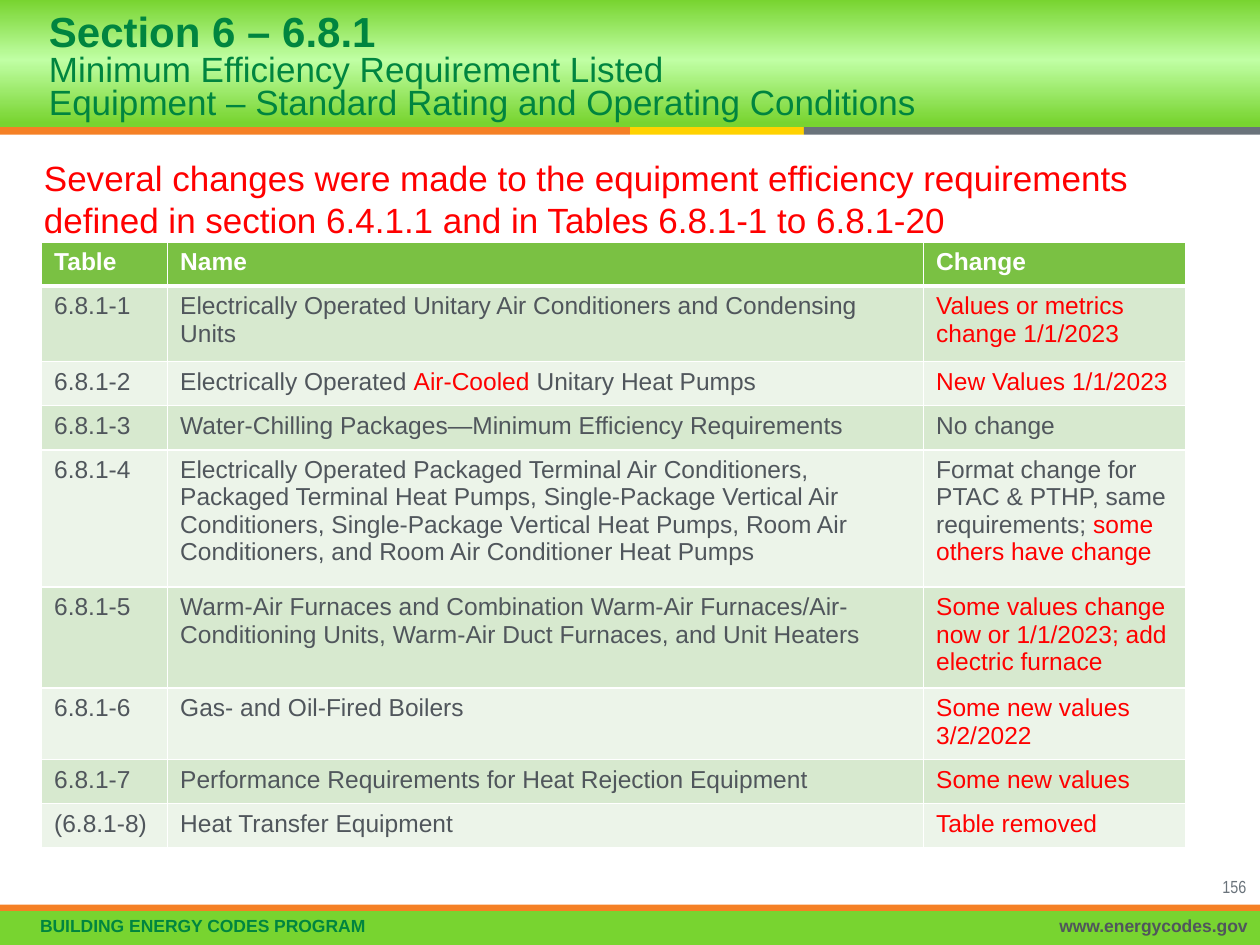
import pptx
import pptx.util
import pptx.dml.color
import pptx.enum.shapes
import pptx.enum.text
import copy
import lxml.etree
import pptx.oxml.ns

Inches, Pt = pptx.util.Inches, pptx.util.Pt
ALIGN = pptx.enum.text.PP_ALIGN
ANCHOR = pptx.enum.text.MSO_ANCHOR
qn = pptx.oxml.ns.qn

GREEN, LIME, PALE_LIME = "00853F", "78D430", "C0FFA4"
ORANGE, YELLOW, SLATE = "F58025", "FFD200", "6A737B"
GREY, RED, WHITE = "50565C", "FF0000", "FFFFFF"
HEAD_FILL, BANDS = "7AC143", ("D7E9CF", "ECF4E9")

COLUMNS = [1, 6, 2.08]
HEADINGS = ["Table", "Name", "Change"]
# Row height, table number, name runs, change runs; a run is (text, colour)
ROWS = [
    (0.6, "6.8.1-1", [("Electrically Operated Unitary Air Conditioners and Condensing Units", GREY)],
     [("Values or metrics change 1/1/2023", RED)]),
    (0.35, "6.8.1-2", [("Electrically Operated ", GREY), ("Air-Cooled", RED), (" Unitary Heat Pumps", GREY)],
     [("New Values 1/1/2023", RED)]),
    (0.35, "6.8.1-3", [("Water-Chilling Packages—Minimum Efficiency Requirements", GREY)],
     [("No change", GREY)]),
    (1.09, "6.8.1-4", [("Electrically Operated Packaged Terminal Air Conditioners, Packaged Terminal "
                        "Heat Pumps, Single-Package Vertical Air Conditioners, Single-Package Vertical "
                        "Heat Pumps, Room Air Conditioners, and Room Air Conditioner Heat Pumps", GREY)],
     [("Format change for PTAC & PTHP, same requirements; ", GREY), ("some others have change", RED)]),
    (0.6, "6.8.1-5", [("Warm-Air Furnaces and Combination Warm-Air Furnaces/Air-Conditioning Units, "
                       "Warm-Air Duct Furnaces, and Unit Heaters", GREY)],
     [("Some values change now or 1/1/2023; add electric furnace", RED)]),
    (0.35, "6.8.1-6", [("Gas- and Oil-Fired Boilers", GREY)], [("Some new values 3/2/2022", RED)]),
    (0.35, "6.8.1-7", [("Performance Requirements for Heat Rejection Equipment", GREY)],
     [("Some new values", RED)]),
    (0.35, "(6.8.1-8)", [("Heat Transfer Equipment", GREY)], [("Table removed", RED)]),
]


def rgb(color):
    return pptx.dml.color.RGBColor.from_string(color)


def add_run(p, text, size=14, color=GREY, bold=False, font="Arial"):
    r = p.add_run()
    r.text = text
    r.font.name, r.font.size, r.font.bold = font, Pt(size), bold
    r.font.color.rgb = rgb(color)


def add_text(slide, text, left, top, width, height, align=ALIGN.LEFT,
             anchor=ANCHOR.TOP, spacing=None, **style):
    tb = slide.shapes.add_textbox(Inches(left), Inches(top), Inches(width), Inches(height))
    tf = tb.text_frame
    tf.word_wrap, tf.vertical_anchor = True, anchor
    p = tf.paragraphs[0]
    p.alignment, p.line_spacing = align, spacing
    if text:
        add_run(p, text, **style)
    return p


def add_bar(slide, left, top, width, height, color):
    sp = slide.shapes.add_shape(pptx.enum.shapes.MSO_SHAPE.RECTANGLE, Inches(left),
                                Inches(top), Inches(width), Inches(height))
    sp.shadow.inherit = False
    sp.line.fill.background()
    sp.fill.solid()
    sp.fill.fore_color.rgb = rgb(color)
    return sp


def add_header(slide, left, top, width, height):
    # Band that is pale along its middle
    band = add_bar(slide, left, top, width, height, LIME)
    band.fill.gradient()
    band.fill.gradient_angle = 270
    stops = band.fill.gradient_stops
    first = band._element.spPr.find(".//" + qn("a:gs"))
    first.addnext(copy.deepcopy(first))
    stops = band.fill.gradient_stops
    for stop, (position, color) in zip(stops, [(0, LIME), (0.47, PALE_LIME), (0.97, LIME)]):
        stop.position = position
        stop.color.rgb = rgb(color)
    # Three-colour rule under the band
    x = left
    for share, color in [(0.5, ORANGE), (0.138, YELLOW), (0.362, SLATE)]:
        add_bar(slide, x, top + height, share * width, 0.06, color)
        x += share * width
    # Title
    p = add_text(slide, "", left + 0.29, top + 0.04, 9.4, height,
                 anchor=ANCHOR.MIDDLE, spacing=0.8)
    add_run(p, "Section 6 – 6.8.1", size=24, color=GREEN, bold=True)
    for line in ["Minimum Efficiency Requirement Listed",
                 "Equipment – Standard Rating and Operating Conditions"]:
        p.add_line_break()
        add_run(p, line, size=20, color=GREEN)


def add_footer(slide, left, top, width, height):
    add_text(slide, "156", left + width - 0.72, top - 0.33, 0.71, 0.18, align=ALIGN.RIGHT,
             size=10, color=SLATE, font="Arial Narrow")
    add_bar(slide, left, top, width, height, LIME)
    add_bar(slide, left, top - 0.05, width, 0.05, ORANGE)
    add_text(slide, "BUILDING ENERGY CODES PROGRAM", left + 0.22, top, 5, height,
             spacing=0.9, size=10, color=GREEN, bold=True)
    add_text(slide, "www.energycodes.gov", left + width - 4, top, 4, height,
             align=ALIGN.RIGHT, spacing=0.9, size=10, bold=True)


def set_cell(cell, runs, fill, bold=False, bottom=1):
    cell.fill.solid()
    cell.fill.fore_color.rgb = rgb(fill)
    for text, color in runs:
        add_run(cell.text_frame.paragraphs[0], text, color=color, bold=bold)
    # Borders come before the fill in the cell properties
    tcPr = cell._tc.get_or_add_tcPr()
    for i, (side, width) in enumerate([("L", 1), ("R", 1), ("T", 1), ("B", bottom)]):
        ln = lxml.etree.Element(qn("a:ln" + side), w=str(Pt(width)))
        solid = lxml.etree.SubElement(ln, qn("a:solidFill"))
        lxml.etree.SubElement(solid, qn("a:srgbClr"), val=WHITE)
        tcPr.insert(i, ln)


def add_changes_table(slide, left, top, width, height):
    table = slide.shapes.add_table(len(ROWS) + 1, len(COLUMNS), Inches(left), Inches(top),
                                   Inches(width), Inches(height)).table
    for column, w in zip(table.columns, COLUMNS):
        column.width = Inches(w)
    table.rows[0].height = Inches(0.35)
    for i, heading in enumerate(HEADINGS):
        set_cell(table.cell(0, i), [(heading, WHITE)], HEAD_FILL, bold=True, bottom=3)
    for i, (h, number, name, change) in enumerate(ROWS, 1):
        table.rows[i].height = Inches(h)
        for j, runs in enumerate([[(number, GREY)], name, change]):
            set_cell(table.cell(i, j), runs, BANDS[(i - 1) % 2])


def main():
    prs = pptx.Presentation()
    prs.slide_width, prs.slide_height = Inches(10), Inches(7.5)
    slide = prs.slides.add_slide(prs.slide_layouts[6])
    add_header(slide, 0, 0, 10, 1.01)
    add_footer(slide, 0, 7.23, 10, 0.27)
    add_text(slide, "Several changes were made to the equipment efficiency requirements "
             "defined in section 6.4.1.1 and in Tables 6.8.1-1 to 6.8.1-20",
             0.25, 1.19, 9.42, 0.75, size=20, color=RED)
    add_changes_table(slide, 0.33, 1.92, sum(COLUMNS), 4.39)
    prs.save("out.pptx")


if __name__ == "__main__":
    main()
